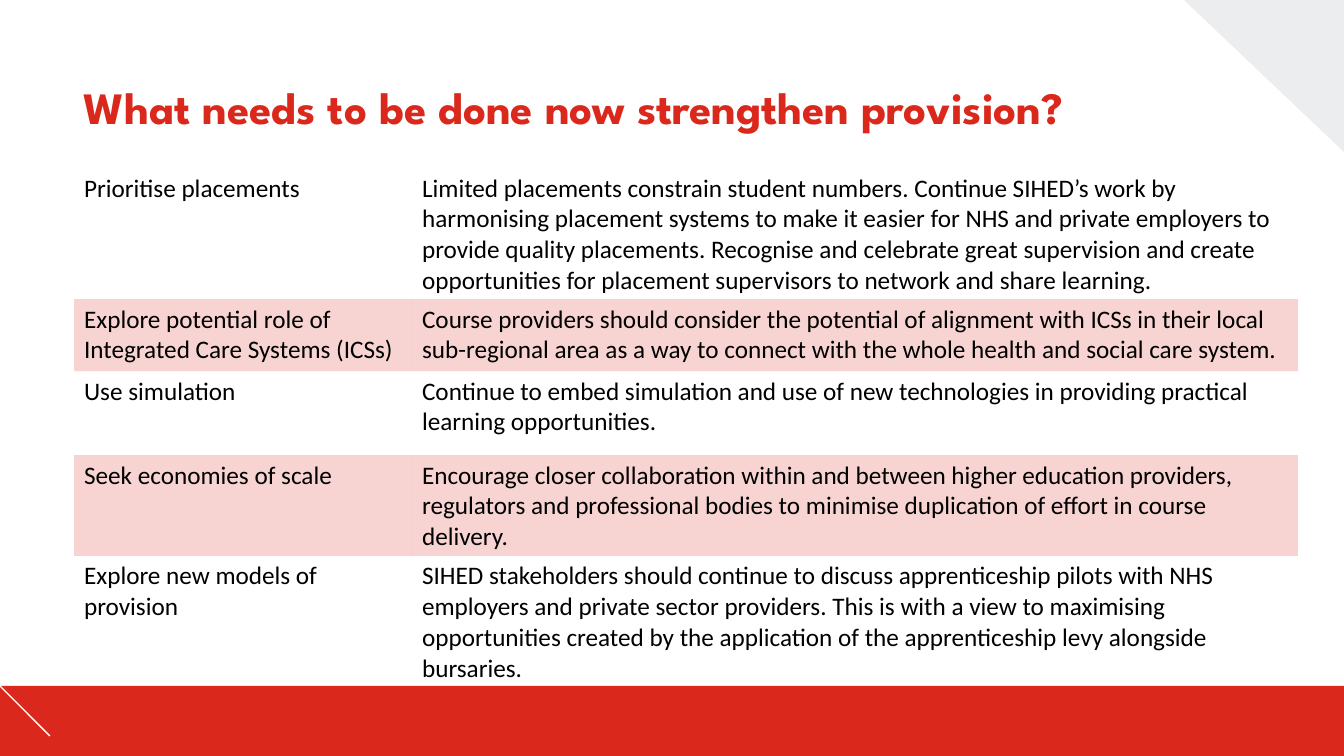
from lxml import etree
from pptx import Presentation
from pptx import util as u
from pptx.dml.color import RGBColor
from pptx.enum import shapes, text
from pptx.oxml import ns

TITLE = "What needs to be done now strengthen provision?"
ACTIONS = [  # action, detail, row height in px
    ("Prioritise placements",
     "Limited placements constrain student numbers. Continue SIHED’s work by "
     "harmonising placement systems to make it easier for NHS and private employers "
     "to provide quality placements. Recognise and celebrate great supervision and "
     "create opportunities for placement supervisors to network and share learning.", 119),
    ("Explore potential role of Integrated Care Systems (ICSs)",
     "Course providers should consider the potential of alignment with ICSs in their "
     "local sub-regional area as a way to connect with the whole health and social "
     "care system.", 72),
    ("Use simulation",
     "Continue to embed simulation and use of new technologies in providing "
     "practical learning opportunities.", 84),
    ("Seek economies of scale",
     "Encourage closer collaboration within and between higher education providers, "
     "regulators and professional bodies to minimise duplication of effort in course "
     "delivery.", 84),
    ("Explore new models of provision",
     "SIHED stakeholders should continue to discuss apprenticeship pilots with NHS "
     "employers and private sector providers. This is with a view to maximising "
     "opportunities created by the application of the apprenticeship levy alongside "
     "bursaries.", 119),
]
COLUMNS = (338, 886)
LEFT, TABLE_TOP, TABLE_HEIGHT = 74, 168, 518
WIDTH, HEIGHT, BAR_TOP = 1344, 756, 686
CORNER = [(1184, 0), (1344, 0), (1344, 152)]
NO_GRID_STYLE = "{2D5ABB26-0587-4C30-8999-92F81FD0307C}"


class Theme:
    red, grey, white, black = "DA291C", "EBEDEE", "FFFFFF", "000000"
    heading, body = "League Spartan", "Calibri"
    title_size, body_size = 32, 18
    line_width = 1
    band_alpha = 20


def px(length):
    return u.Emu(round(length * 914400 / 100.8))


def rgb(colour):
    return RGBColor.from_string(colour)


def write(frame, words, *, size=Theme.body_size, font=Theme.body, colour=Theme.black,
          bold=False, spacing=None):
    frame.word_wrap = True
    para = frame.paragraphs[0]
    para.line_spacing = spacing
    span = para.add_run()
    span.text = words
    span.font.size, span.font.name, span.font.bold = u.Pt(size), font, bold
    span.font.color.rgb = rgb(colour)


def paint(shape, colour):
    shape.shadow.inherit = False
    shape.fill.solid()
    shape.fill.fore_color.rgb = rgb(colour)
    shape.line.fill.background()


def add_node(parent, tag, **attributes):
    return etree.SubElement(parent, ns.qn(tag), attributes)


def tint(cell):
    """Fill a cell with see-through red."""
    cell.fill.solid()
    cell.fill.fore_color.rgb = rgb(Theme.red)
    colour = cell._tc.tcPr.find(".//" + ns.qn("a:srgbClr"))
    add_node(colour, "a:alpha", val=str(Theme.band_alpha * 1000))


def underline(cell):
    """Draw the bottom border of a cell."""
    properties = cell._tc.get_or_add_tcPr()
    border = add_node(properties, "a:lnB", w=str(u.Pt(Theme.line_width)))
    add_node(add_node(border, "a:solidFill"), "a:srgbClr", val=Theme.red)
    properties.insert(0, border)


def add_backdrop(page):
    outline = page.shapes.build_freeform(*map(px, CORNER[0]), scale=1.0)
    outline.add_line_segments([(px(x), px(y)) for x, y in CORNER[1:]], close=True)
    paint(outline.convert_to_shape(), Theme.grey)

    bar = page.shapes.add_shape(shapes.MSO_SHAPE.RECTANGLE, 0, px(BAR_TOP),
                                px(WIDTH), px(HEIGHT - BAR_TOP))
    paint(bar, Theme.red)
    slash = page.shapes.add_connector(shapes.MSO_CONNECTOR.STRAIGHT, 0, px(BAR_TOP),
                                      px(50), px(BAR_TOP + 50))
    slash.line.color.rgb = rgb(Theme.white)
    slash.line.width = u.Pt(Theme.line_width)
    add_node(slash._element.spPr, "a:effectLst")


def add_title(page):
    box = page.shapes.add_textbox(px(LEFT), px(70), px(1206), px(80))
    box.text_frame.vertical_anchor = text.MSO_ANCHOR.MIDDLE
    write(box.text_frame, TITLE, size=Theme.title_size, font=Theme.heading,
          colour=Theme.red, bold=True, spacing=0.9)


def add_actions(page):
    frame = page.shapes.add_table(len(ACTIONS), len(COLUMNS), px(LEFT), px(TABLE_TOP),
                                  px(sum(COLUMNS)), px(TABLE_HEIGHT))
    table = frame.table
    table.first_row = table.horz_banding = False
    table._tbl.tblPr.find(ns.qn("a:tableStyleId")).text = NO_GRID_STYLE
    for column, width in zip(table.columns, COLUMNS):
        column.width = px(width)
    for index, (*words, height) in enumerate(ACTIONS):
        table.rows[index].height = px(height)
        for cell, content in zip(table.rows[index].cells, words):
            write(cell.text_frame, content)
            if index % 2:
                tint(cell)
            else:
                cell.fill.background()
            if index == len(ACTIONS) - 1:
                underline(cell)
    frame.height = px(TABLE_HEIGHT)


def main():
    deck = Presentation()
    deck.slide_width, deck.slide_height = px(WIDTH), px(HEIGHT)
    page = deck.slides.add_slide(deck.slide_layouts[6])
    add_backdrop(page)
    add_title(page)
    add_actions(page)
    deck.save("out.pptx")


if __name__ == "__main__":
    main()
